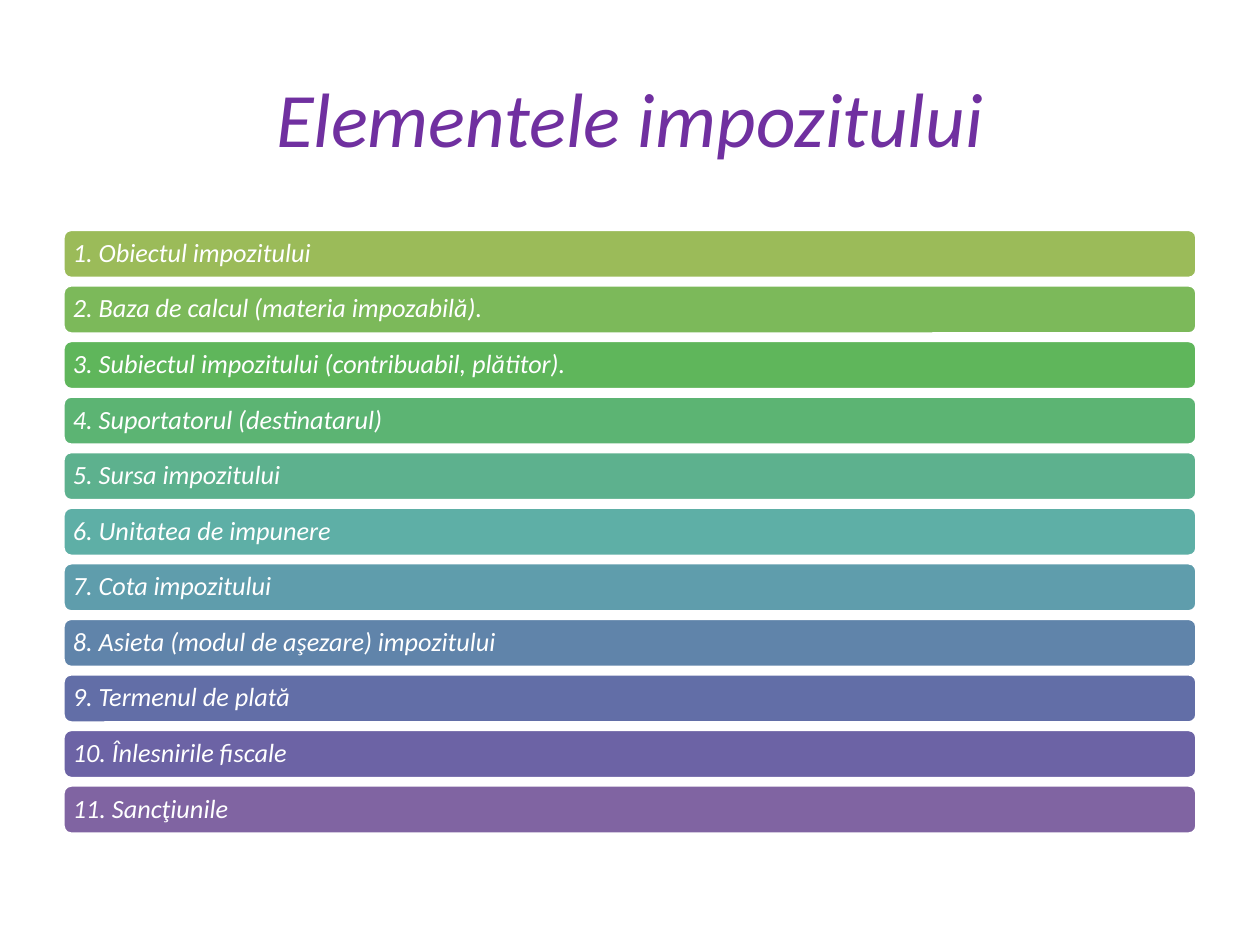
from dataclasses import dataclass

from pptx import Presentation
from pptx import util as u
from pptx.dml.color import RGBColor
from pptx.enum import shapes, text


@dataclass(frozen=True)
class Theme:
    font: str = "Calibri"
    title_size: int = 44
    bar_size: int = 15
    title: str = "7030A0"
    white: str = "FFFFFF"
    bars: tuple = ("9BBB59", "7CB95A", "5FB65B", "5CB473", "5DB18E", "5EAFA6",
                   "5F9DAC", "6084AA", "626EA7", "6C63A5", "8064A2")


THEME = Theme()

ELEMENTS = (
    "Obiectul impozitului",
    "Baza de calcul (materia impozabilă).",
    "Subiectul impozitului (contribuabil, plătitor).",
    "Suportatorul (destinatarul)",
    "Sursa impozitului",
    "Unitatea de impunere",
    "Cota impozitului",
    "Asieta (modul de aşezare) impozitului",
    "Termenul de plată",
    "Înlesnirile fiscale",
    "Sancţiunile",
)


def write(tf, content, *, size, color, align, spacing=None):
    tf.word_wrap = True
    tf.vertical_anchor = text.MSO_ANCHOR.MIDDLE
    p = tf.paragraphs[0]
    p.alignment = align
    p.line_spacing = spacing
    r = p.add_run()
    r.text = content
    r.font.name = THEME.font
    r.font.size = u.Pt(size)
    r.font.italic = True
    r.font.color.rgb = RGBColor.from_string(color)


def place_title(s, content, left, top, width, height):
    sp = s.shapes.title
    sp.left, sp.top, sp.width, sp.height = map(u.Inches, (left, top, width, height))
    write(sp.text_frame, content, size=THEME.title_size, color=THEME.title,
          align=text.PP_ALIGN.CENTER)


def add_bar(s, content, fill, left, top, width, height):
    sp = s.shapes.add_shape(shapes.MSO_SHAPE.ROUNDED_RECTANGLE,
                            *map(u.Inches, (left, top, width, height)))
    sp.shadow.inherit = False
    sp.fill.solid()
    sp.fill.fore_color.rgb = RGBColor.from_string(fill)
    sp.line.color.rgb = RGBColor.from_string(THEME.white)
    sp.line.width = u.Pt(2)
    tf = sp.text_frame
    tf.margin_left = tf.margin_right = u.Inches(0.06)
    tf.margin_top = tf.margin_bottom = u.Inches(0.06)
    write(tf, content, size=THEME.bar_size, color=THEME.white,
          align=text.PP_ALIGN.LEFT, spacing=0.9)


def add_bar_list(s, items, left, top, width, height, bar_height=0.39):
    pitch = (height - bar_height) / (len(items) - 1)
    for i, (item, fill) in enumerate(zip(items, THEME.bars)):
        add_bar(s, f"{i + 1}. {item}", fill,
                left, top + i * pitch, width, bar_height)


def main():
    prs = Presentation()
    prs.slide_width, prs.slide_height = u.Inches(10), u.Inches(7.5)
    s = prs.slides.add_slide(prs.slide_layouts.get_by_name("Title Only"))
    place_title(s, "Elementele impozitului", 0.5, 0.3, 9, 1.25)
    add_bar_list(s, ELEMENTS, 0.5, 1.82, 9, 4.8)
    prs.save("out.pptx")


if __name__ == "__main__":
    main()
